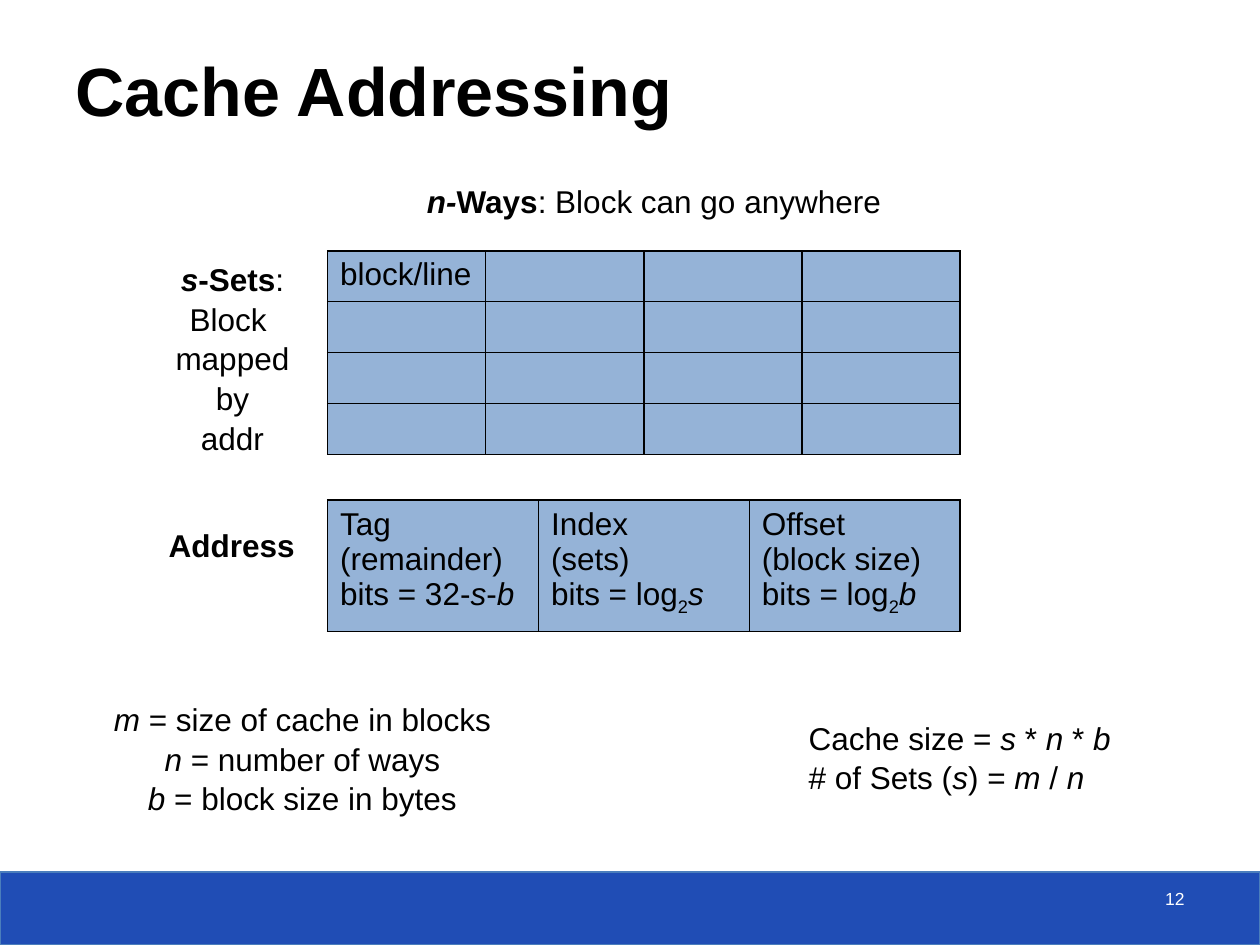
"""Build the Cache Addressing slide with a set/way grid and an address layout."""
from lxml import etree
from pptx import Presentation
from pptx.dml.color import RGBColor
from pptx.enum import shapes, text
from pptx.oxml import ns
from pptx.util import Inches, Pt

BLACK = RGBColor(0x00, 0x00, 0x00)
WHITE = RGBColor(0xFF, 0xFF, 0xFF)
BAR_BLUE = RGBColor(0x20, 0x4D, 0xB5)
BAR_EDGE = RGBColor(0x4B, 0x7E, 0xBC)
CELL_BLUE = RGBColor(0x95, 0xB3, 0xD7)
LEFT, CENTER, RIGHT = text.PP_ALIGN.LEFT, text.PP_ALIGN.CENTER, text.PP_ALIGN.RIGHT

BODY = {"name": "Arial", "size": Pt(18), "bold": False, "italic": False}
STYLES = {
    "": {},
    "b": {"bold": True},
    "i": {"italic": True},
    "bi": {"bold": True, "italic": True},
    "sub": {},
}

TITLE = [[("Cache Addressing", "b")]]
PAGE_NUMBER = [[("12", "")]]
LABELS = [
    ((1.29, 2, 1.11, 1.62), CENTER,
     [[("s", "bi"), ("-Sets", "b"), (":\nBlock \nmapped\nby\naddr", "")]]),
    ((3.29, 1.38, 3.91, 0.4), LEFT,
     [[("n-", "bi"), ("Ways", "b"), (": Block can go anywhere", "")]]),
    ((0.79, 5.49, 3.22, 1.01), CENTER,
     [[("m", "i"), (" = size of cache in blocks", "")],
      [("n ", "i"), ("= number of ways\n", ""), ("b", "i"), (" = block size in bytes", "")]]),
    ((1.24, 4.11, 1.21, 0.4), LEFT, [[("Address", "b")]]),
    ((6.32, 5.64, 2.62, 0.71), LEFT,
     [[("Cache size = ", ""), ("s ", "i"), ("*", ""), (" n ", "i"), ("*", ""), (" b", "i")],
      [("# of Sets (", ""), ("s", "i"), (") = ", ""), ("m", "i"), (" / ", ""), ("n", "i")]]),
]
WAYS, SETS = 4, 4
EMPTY = [("", "")]
CACHE = [[EMPTY] * WAYS for _ in range(SETS)]
CACHE[0][0] = [("block/line", "")]
ADDRESS = [[
    [("Tag (remainder)\nbits = 32-", ""), ("s", "i"), ("-", ""), ("b", "i")],
    [("Index\n(sets)\nbits = log", ""), ("2", "sub"), ("s", "i")],
    [("Offset \n(block size)\nbits = log", ""), ("2", "sub"), ("b", "i")],
]]
TABLES = [((2.6, 1.99, 5.02, 1.62), CACHE), ((2.6, 3.97, 5.02, 1), ADDRESS)]


def set_font(font, color, **values):
    for name, value in {**BODY, **values}.items():
        setattr(font, name, value)
    font.color.rgb = color


def write(frame, paragraphs, align=LEFT, spacing=1.0, color=BLACK, **values):
    for number, parts in enumerate(paragraphs):
        para = frame.add_paragraph() if number else frame.paragraphs[0]
        para.alignment, para.line_spacing = align, spacing
        set_font(para.font, color, **values)
        for words, style in parts:
            for index, line in enumerate(words.split("\n")):
                if index:
                    para.add_line_break()
                if not line:
                    continue
                span = para.add_run()
                span.text = line
                set_font(span.font, color, **{**values, **STYLES[style]})
                if style == "sub":
                    span.font._element.set("baseline", "-25000")


def add_label(page, place, paragraphs, align, wrap=False, **values):
    box = page.shapes.add_textbox(*map(Inches, place))
    box.text_frame.word_wrap = wrap
    write(box.text_frame, paragraphs, align, **values)


def outline_cell(cell):
    properties = cell._tc.get_or_add_tcPr()
    for side in ("a:lnL", "a:lnR", "a:lnT", "a:lnB"):
        line = etree.SubElement(properties, ns.qn(side), w=str(Pt(1)))
        fill = etree.SubElement(line, ns.qn("a:solidFill"))
        etree.SubElement(fill, ns.qn("a:srgbClr"), val=str(BLACK))


def add_grid(page, place, rows):
    grid = page.shapes.add_table(len(rows), len(rows[0]), *map(Inches, place)).table
    grid.first_row = grid.horz_banding = False
    for r, row in enumerate(rows):
        for c, parts in enumerate(row):
            cell = grid.cell(r, c)
            outline_cell(cell)
            cell.fill.solid()
            cell.fill.fore_color.rgb = CELL_BLUE
            write(cell.text_frame, [parts])


def add_bar(page):
    bar = page.shapes.add_shape(
        shapes.MSO_SHAPE.RECTANGLE, *map(Inches, (0, 6.92, 10, 0.58)))
    bar.shadow.inherit = False
    bar.fill.solid()
    bar.fill.fore_color.rgb = BAR_BLUE
    bar.line.color.rgb = BAR_EDGE
    bar.line.width = Pt(0.75)


def format_title(title):
    title.left, title.top, title.width, title.height = map(Inches, (0.5, 0.25, 9.22, 0.83))
    title.fill.solid()
    title.fill.fore_color.rgb = WHITE
    color = title._element.spPr.find(".//" + ns.qn("a:srgbClr"))
    etree.SubElement(color, ns.qn("a:alpha"), val="75000")
    frame = title.text_frame
    frame.vertical_anchor = text.MSO_ANCHOR.BOTTOM
    frame.auto_size = text.MSO_AUTO_SIZE.NONE
    write(frame, TITLE, size=Pt(39))


def main():
    deck = Presentation()
    deck.slide_width, deck.slide_height = Inches(10), Inches(7.5)
    page = deck.slides.add_slide(deck.slide_layouts[5])
    add_bar(page)
    format_title(page.shapes.title)
    add_label(page, (7.17, 7, 2.33, 0.33), PAGE_NUMBER, RIGHT, True, color=WHITE, size=Pt(10))
    for place, rows in TABLES:
        add_grid(page, place, rows)
    for place, align, paragraphs in LABELS:
        add_label(page, place, paragraphs, align, spacing=1.05)
    deck.save("out.pptx")


if __name__ == "__main__":
    main()
